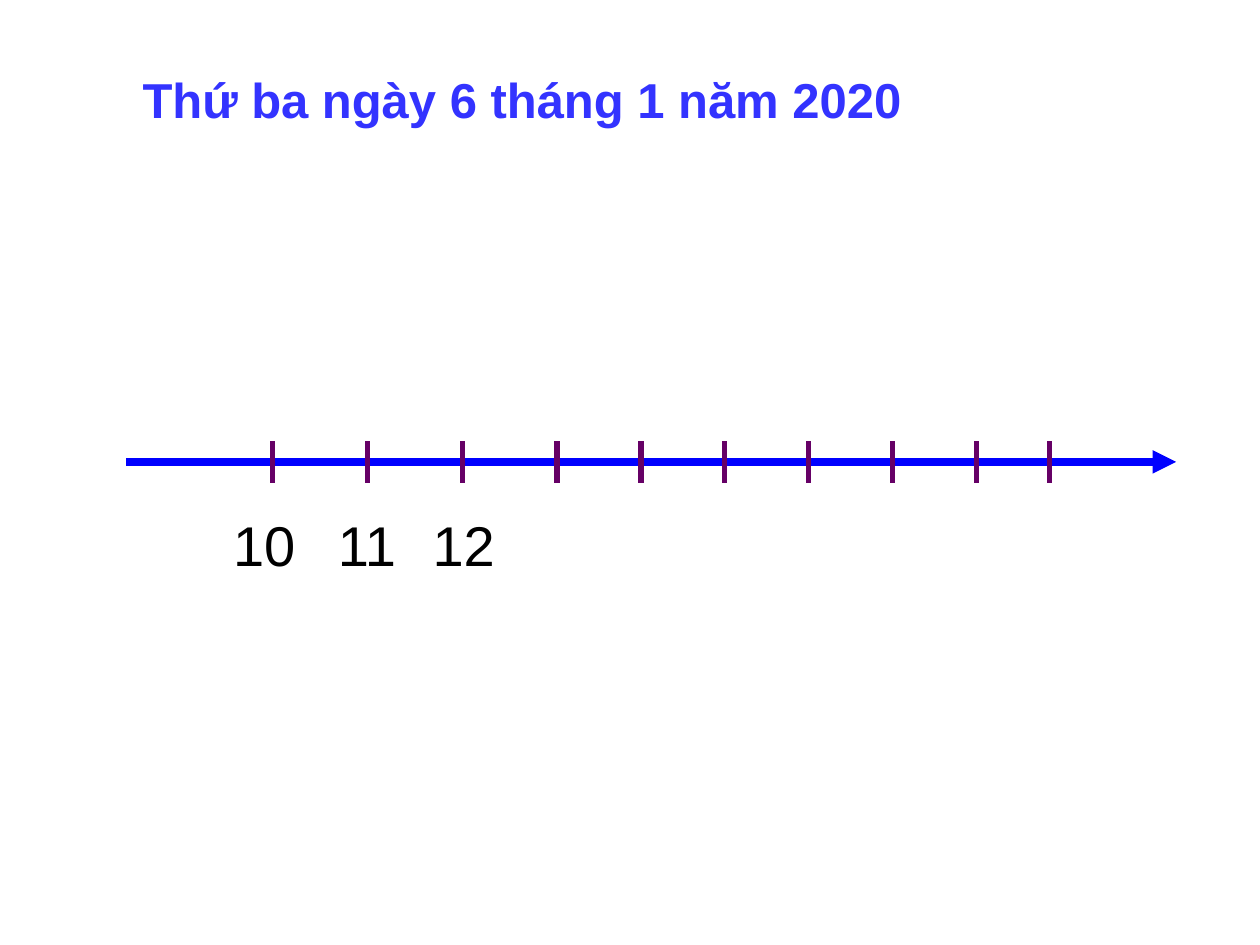
from itertools import accumulate

from lxml import etree
from pptx import Presentation
from pptx import util as u
from pptx.dml.color import RGBColor
from pptx.enum import shapes, text
from pptx.oxml.ns import qn

COLORS = {"title": "3333FF", "axis": "0000FF", "tick": "660066", "label": "000000"}

AXIS_Y = 9.31
AXIS_LEFT, AXIS_RIGHT = 2.54, 23.71
TICK_HALF = 0.42
FIRST_TICK = 5.5
TICK_GAPS = [1.91] * 3 + [1.69] * 5 + [1.48]

# Label text, left and width in centimetres
LABELS = [("10", 4.45, 2.33), ("11", 6.56, 2.54), ("12", 8.47, 2.75)]


def color(name):
    return RGBColor.from_string(COLORS[name])


def add_line(page, start, end, color_name, width):
    ends = [u.Cm(value) for value in (*start, *end)]
    line = page.shapes.add_connector(shapes.MSO_CONNECTOR.STRAIGHT, *ends)
    line.line.color.rgb = color(color_name)
    line.line.width = u.Pt(width)
    etree.SubElement(line._element.spPr, qn("a:effectLst"))
    return line


def add_arrowhead(line):
    outline = line.line._get_or_add_ln()
    etree.SubElement(outline, qn("a:tailEnd"), type="triangle")


def write_text(box, wording, size, color_name, bold=False):
    frame = box.text_frame
    frame.word_wrap = True
    frame.auto_size = text.MSO_AUTO_SIZE.SHAPE_TO_FIT_TEXT
    frame.vertical_anchor = text.MSO_ANCHOR.TOP
    para = frame.paragraphs[0]
    para.text = wording
    para.alignment = text.PP_ALIGN.LEFT
    para.font.name = "Arial"
    para.font.size = u.Pt(size)
    para.font.bold = bold
    para.font.color.rgb = color(color_name)
    # Space before as half a line
    spacing = etree.Element(qn("a:spcBef"))
    etree.SubElement(spacing, qn("a:spcPct"), val="50000")
    para._p.get_or_add_pPr().insert(0, spacing)


def add_title(page, wording):
    title = page.shapes.title
    title.left, title.top = u.Cm(2.62), u.Cm(1.27)
    title.width, title.height = u.Cm(20.75), u.Cm(1.45)
    write_text(title, wording, 28, "title", bold=True)


def add_label(page, wording, left, width):
    box = page.shapes.add_textbox(u.Cm(left), u.Cm(10.16), u.Cm(width), u.Cm(1.6))
    write_text(box, wording, 32, "label")


def main():
    deck = Presentation()
    deck.slide_width, deck.slide_height = u.Cm(25.4), u.Cm(19.05)
    page = deck.slides.add_slide(deck.slide_layouts.get_by_name("Title Only"))
    add_title(page, "Thứ ba ngày 6 tháng 1 năm 2020")

    # Number line with its ticks
    axis = add_line(page, (AXIS_LEFT, AXIS_Y), (AXIS_RIGHT, AXIS_Y), "axis", 4.5)
    add_arrowhead(axis)
    for x in accumulate(TICK_GAPS, initial=FIRST_TICK):
        add_line(page, (x, AXIS_Y - TICK_HALF), (x, AXIS_Y + TICK_HALF), "tick", 3)

    # Numbers under the first ticks
    for wording, left, width in LABELS:
        add_label(page, wording, left, width)

    deck.save("out.pptx")


if __name__ == "__main__":
    main()
